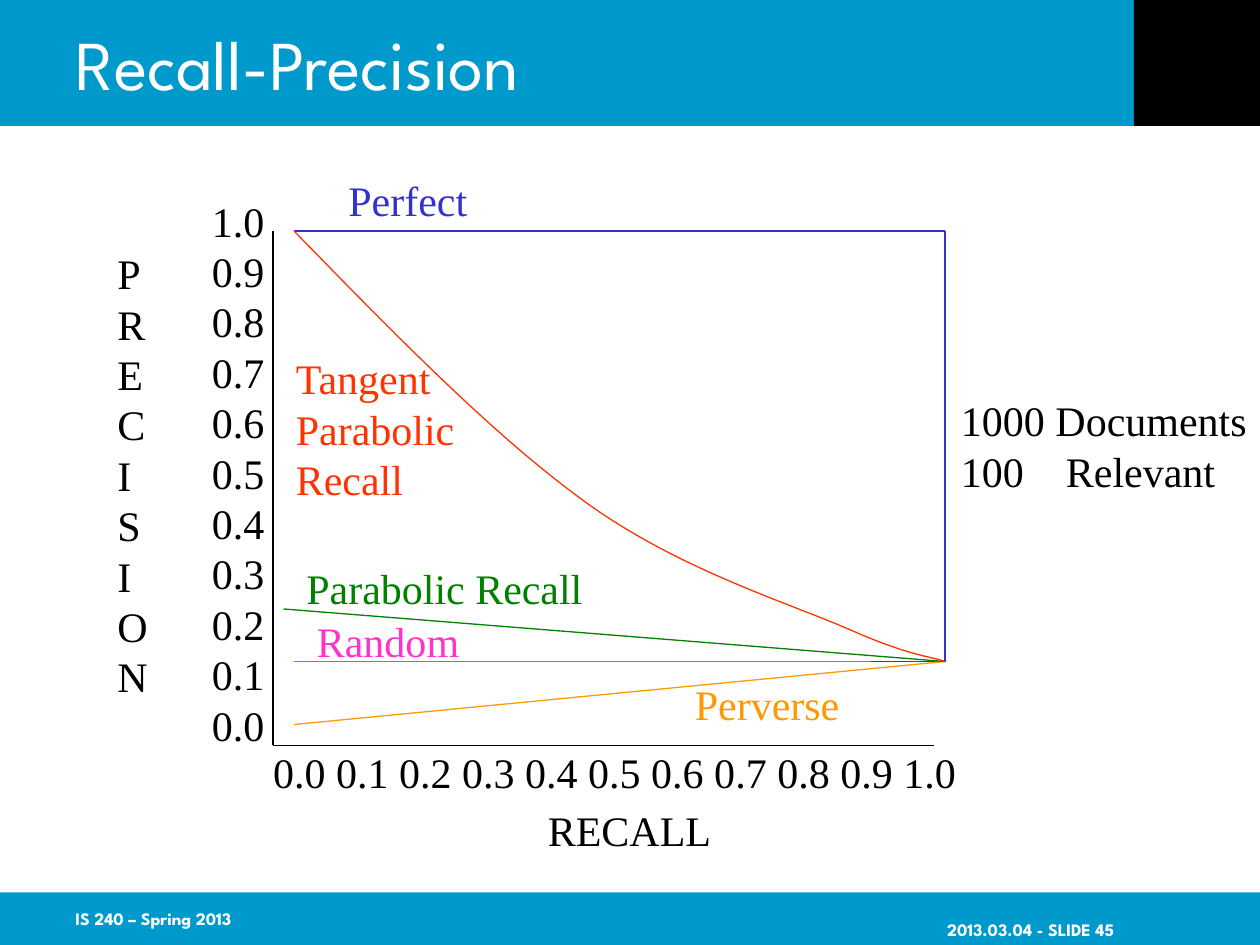
from lxml import etree
from pptx import Presentation
from pptx.dml.color import RGBColor
from pptx.enum.shapes import MSO_CONNECTOR, MSO_SHAPE
from pptx.enum.text import MSO_ANCHOR, PP_ALIGN
from pptx.oxml.ns import qn
from pptx.util import Pt

STRAIGHT, RECT = MSO_CONNECTOR.STRAIGHT, MSO_SHAPE.RECTANGLE
TOP, MIDDLE = MSO_ANCHOR.TOP, MSO_ANCHOR.MIDDLE
LEFT, RIGHT = PP_ALIGN.LEFT, PP_ALIGN.RIGHT
HEAD, BODY = "League Spartan", "Times New Roman"
BLACK, WHITE, BAND = "000000", "FFFFFF", "0099CC"
BLUE, RED, GREEN, PINK, ORANGE = "3333CC", "FF3300", "008000", "FF33CC", "FF9900"

# Content: bands (left, top, width, height, colour)
BANDS = [(0, 0, 720, 72, BAND), (0, 510, 720, 30, BAND), (648, 0, 72, 72, BLACK)]
FOOTERS = [("IS 240 – Spring 2013", 36, 510, LEFT),
           ("2013.03.04 - SLIDE 45", 486.5, 516, RIGHT)]

# Labels (lines, left, top, width, colour)
TICKS = [f"{i / 10:.1f}" for i in range(11)]
LABELS = [
    (["1000 Documents", "100\tRelevant"], 542, 222, 178, BLACK),
    (TICKS[::-1], 114, 108, 45, BLACK),
    (list("PRECISION"), 60, 138, 32, BLACK),
    ([" ".join(TICKS)], 149, 423, 405, BLACK),
    (["RECALL"], 306, 456, 108, BLACK),
    (["Random"], 174, 348, 96, PINK),
    (["Perfect"], 192, 96, 96, BLUE),
    (["Perverse"], 390, 384, 97, ORANGE),
    (["Tangent", "Parabolic", "Recall"], 162, 198, 105, RED),
    (["Parabolic Recall"], 168, 318, 216, GREEN),
]
LINE_PITCH = 28.8

# Plot lines (x1, y1, x2, y2, colour)
X0, X1, TOP_Y, END_Y = 168, 540, 132, 378
LINES = [
    (156, TOP_Y, 156, 426, BLACK),
    (156, 426, 534, 426, BLACK),
    (X0, END_Y, X1, END_Y, PINK),
    (X0, TOP_Y, 204, TOP_Y, BLUE),
    (X0, 414, X1, END_Y, ORANGE),
    (498, END_Y, 534, END_Y, BLUE),
    (162, 348, X1, END_Y, GREEN),
    (X0, TOP_Y, X1, TOP_Y, BLUE),
    (X1, TOP_Y, X1, END_Y, BLUE),
]
# Tangent curve: start point, then two controls and an end per Bezier piece
CURVE = [(X0, TOP_Y), (225.5, 191), (283, 250), (336, 288),
         (389, 326), (452, 345), (486, 360),
         (520, 375), (531.5, 375), (X1, END_Y)]
STEPS = 24


def rgb(value):
    return RGBColor.from_string(value)


def style(p, font, size, color, bold=False):
    for r in p.runs:
        r.font.name, r.font.size, r.font.bold = font, Pt(size), bold
        r.font.color.rgb = rgb(color)


def add_text(lines, x, y, w, h, font, size, color, anchor=TOP, align=LEFT,
             bold=False, wrap=False, pitch=None):
    tf = s.shapes.add_textbox(Pt(x), Pt(y), Pt(w), Pt(h)).text_frame
    tf.word_wrap, tf.vertical_anchor = wrap, anchor
    for i, line in enumerate(lines):
        p = tf.paragraphs[0] if i == 0 else tf.add_paragraph()
        p.text, p.alignment = line, align
        if pitch:
            p.line_spacing = Pt(pitch)
        if "\t" in line:
            tabs = etree.SubElement(p._p.get_or_add_pPr(), qn("a:tabLst"))
            etree.SubElement(tabs, qn("a:tab"), pos=str(Pt(60)), algn="l")
        style(p, font, size, color, bold)
    return tf


def bezier(a, b, c, d, t):
    u = 1 - t
    return tuple(u**3 * i + 3 * u * u * t * j + 3 * u * t * t * k + t**3 * m
                 for i, j, k, m in zip(a, b, c, d))


prs = Presentation()
prs.slide_width, prs.slide_height = Pt(720), Pt(540)
s = prs.slides.add_slide(prs.slide_layouts[5])

# Bands and footers
for x, y, w, h, color in BANDS:
    sp = s.shapes.add_shape(RECT, Pt(x), Pt(y), Pt(w), Pt(h))
    sp.shadow.inherit = False
    sp.fill.solid()
    sp.fill.fore_color.rgb = rgb(color)
    sp.line.fill.background()
for text, x, y, align in FOOTERS:
    tf = add_text([text], x, y, 150, 30, HEAD, 10, WHITE, MIDDLE, align,
                  bold=True, wrap=True)
    tf.margin_right = 0

# Title, brought in front of the band
title = s.shapes.title
title.left, title.top, title.width, title.height = Pt(36), Pt(0), Pt(612), Pt(72)
s.shapes._spTree.append(title._element)
tf = title.text_frame
tf.text, tf.vertical_anchor = "Recall-Precision", MIDDLE
tf.paragraphs[0].alignment = LEFT
style(tf.paragraphs[0], HEAD, 40, WHITE)

# Axes and straight plot lines
for x1, y1, x2, y2, color in LINES:
    ln = s.shapes.add_connector(STRAIGHT, Pt(x1), Pt(y1), Pt(x2), Pt(y2))
    ln.line.color.rgb, ln.line.width = rgb(color), Pt(0.75)
    etree.SubElement(ln._element.spPr, qn("a:effectLst"))

# Tangent curve
points = [bezier(*CURVE[i:i + 4], n / STEPS)
          for i in range(0, len(CURVE) - 1, 3) for n in range(1, STEPS + 1)]
fb = s.shapes.build_freeform(Pt(X0), Pt(TOP_Y))
fb.add_line_segments([(Pt(x), Pt(y)) for x, y in points], close=False)
sp = fb.convert_to_shape()
sp.shadow.inherit = False
sp.fill.background()
sp.line.color.rgb, sp.line.width = rgb(RED), Pt(0.75)

# Labels
for lines, x, y, w, color in LABELS:
    add_text(lines, x, y, w, len(lines) * LINE_PITCH + 7.2, BODY, 24, color,
             pitch=LINE_PITCH)

prs.save("out.pptx")
